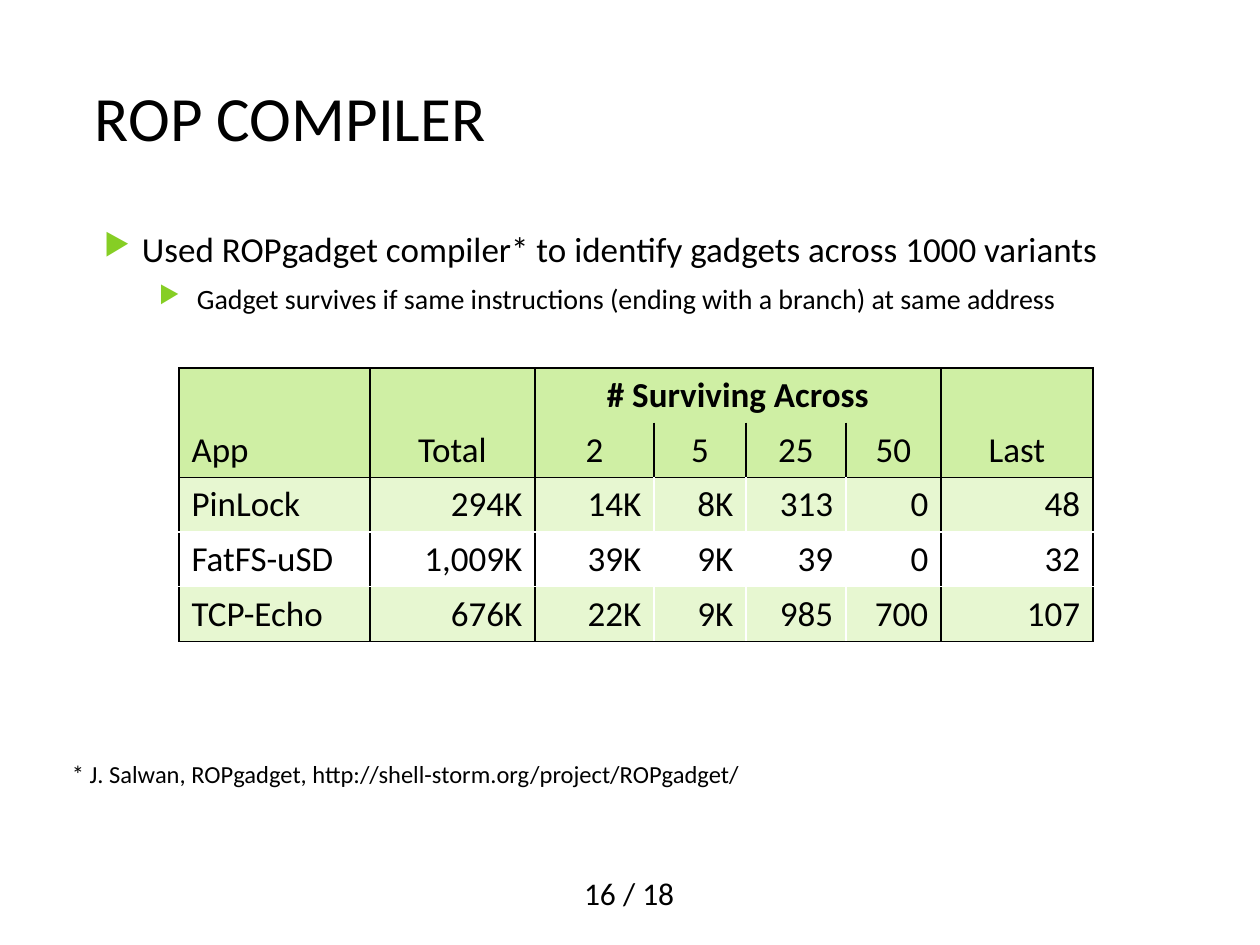
from dataclasses import dataclass

from lxml.etree import SubElement
from pptx import Presentation
from pptx.dml.color import RGBColor
from pptx.enum.text import MSO_ANCHOR, PP_ALIGN
from pptx.oxml import parse_xml
from pptx.oxml.ns import nsdecls, qn
from pptx.util import Emu, Pt

PX_PER_INCH = 126


@dataclass(frozen=True)
class Theme:
    font: str = "Calibri"
    black: str = "000000"
    white: str = "FFFFFF"
    bullet: str = "86CE24"
    header: str = "CFEFA4"
    band: str = "E7F7D1"
    title_size: int = 36
    body_size: int = 20
    sub_size: int = 16
    page_size: int = 18
    note_size: int = 14


THEME = Theme()

COLUMN_WIDTHS = [191, 165, 119, 92, 100, 95, 152]
ROW_HEIGHT = 52
HEADER_ROWS = 2
GROUP_START, GROUP_END = 2, 6  # columns under "# Surviving Across"
ROWS = [
    ["", "", "# Surviving Across", "", "", "", ""],
    ["App", "Total", "2", "5", "25", "50", "Last"],
    ["PinLock", "294K", "14K", "8K", "313", "0", "48"],
    ["FatFS-uSD", "1,009K", "39K", "9K", "39", "0", "32"],
    ["TCP-Echo", "676K", "22K", "9K", "985", "700", "107"],
]


def px(length):
    return Emu(round(length * 914400 / PX_PER_INCH))


def set_font(para, size, bold=False):
    font = para.font
    font.name = THEME.font
    font.size = Pt(size)
    font.bold = bold
    font.color.rgb = RGBColor.from_string(THEME.black)


def add_text(page, frame, lines, wrap=True, side_inset=13, anchor=MSO_ANCHOR.TOP):
    """Add a text box holding (text, size) lines and return its paragraphs."""
    box = page.shapes.add_textbox(*map(px, frame))
    text_frame = box.text_frame
    text_frame.word_wrap = wrap
    text_frame.vertical_anchor = anchor
    text_frame.margin_left = text_frame.margin_right = px(side_inset)
    text_frame.text = "\n".join(text for text, size in lines)
    for para, (text, size) in zip(text_frame.paragraphs, lines):
        set_font(para, size)
    return text_frame.paragraphs


def add_bullets(page, frame, items):
    """Add bulleted (text, size, left indent) items."""
    paras = add_text(page, frame, [item[:2] for item in items], side_inset=0)
    for level, (para, (text, size, indent)) in enumerate(zip(paras, items)):
        properties = para._p.get_or_add_pPr()
        properties.set("marL", str(px(indent)))
        properties.set("indent", str(px(-38)))
        properties.remove(properties.find(qn("a:defRPr")))
        color = SubElement(properties, qn("a:buClr"))
        SubElement(color, qn("a:srgbClr"), val=THEME.bullet)
        SubElement(properties, qn("a:buSzPct"), val="85000")
        SubElement(properties, qn("a:buChar"), char="▶")
        para.level = level
        if level:
            para.space_before = Pt(7)
        set_font(para, size)


def vertical_edge(row, edge):
    if row == 1 or not GROUP_START < edge < GROUP_END:
        return THEME.black
    return THEME.white if row >= HEADER_ROWS else None


def horizontal_edge(edge):
    if edge in (0, HEADER_ROWS, len(ROWS)):
        return THEME.black
    return THEME.white if edge > HEADER_ROWS else None


def set_borders(cell, colors):
    properties = cell._tc.get_or_add_tcPr()
    for index, (side, color) in enumerate(zip("LRTB", colors)):
        fill = (f'<a:solidFill><a:srgbClr val="{color}"/></a:solidFill>'
                if color else "<a:noFill/>")
        line = f'<a:ln{side} {nsdecls("a")} w="12700">{fill}</a:ln{side}>'
        properties.insert(index, parse_xml(line))


def cell_style(row, column):
    """Return fill colour and alignment of a cell."""
    if row < HEADER_ROWS:
        return THEME.header, PP_ALIGN.CENTER if column else PP_ALIGN.LEFT
    fill = THEME.white if (row - HEADER_ROWS) % 2 else THEME.band
    return fill, PP_ALIGN.RIGHT if column else PP_ALIGN.LEFT


def add_results(page, left, top):
    frame = page.shapes.add_table(
        len(ROWS), len(COLUMN_WIDTHS), px(left), px(top),
        px(sum(COLUMN_WIDTHS)), px(ROW_HEIGHT * len(ROWS)))
    table = frame.table
    for column, width in zip(table.columns, COLUMN_WIDTHS):
        column.width = px(width)
    table.cell(0, GROUP_START).merge(table.cell(0, GROUP_END - 1))
    for r, values in enumerate(ROWS):
        table.rows[r].height = px(ROW_HEIGHT)
        for c, value in enumerate(values):
            cell = table.cell(r, c)
            fill, alignment = cell_style(r, c)
            cell.fill.solid()
            cell.fill.fore_color.rgb = RGBColor.from_string(fill)
            cell.text = value
            para = cell.text_frame.paragraphs[0]
            para.alignment = alignment
            set_font(para, THEME.body_size, bold=r == 0)
            right = c + (cell.span_width if cell.is_merge_origin else 1)
            set_borders(cell, [vertical_edge(r, c), vertical_edge(r, right),
                               horizontal_edge(r), horizontal_edge(r + 1)])


def main():
    deck = Presentation()
    deck.slide_width, deck.slide_height = px(1260), px(945)
    page = deck.slides.add_slide(deck.slide_layouts[6])

    # Page number
    add_text(page, (571, 868, 122, 50), [("16 / 18", THEME.page_size)], wrap=False)

    # Title and bullets
    add_text(page, (95, 38, 1071, 157), [("ROP COMPILER", THEME.title_size)],
             side_inset=0, anchor=MSO_ANCHOR.MIDDLE)
    add_bullets(page, (95, 221, 1071, 608), [
        ("Used ROPgadget compiler* to identify gadgets across 1000 variants",
         THEME.body_size, 47),
        ("Gadget survives if same instructions (ending with a branch) at same address",
         THEME.sub_size, 102),
    ])

    # Gadget survival table
    add_results(page, 179, 368)

    # Source note
    add_text(page, (59, 753, 1071, 43), [
        ("* J. Salwan, ROPgadget, http://shell-storm.org/project/ROPgadget/",
         THEME.note_size)])

    deck.save("out.pptx")


if __name__ == "__main__":
    main()
